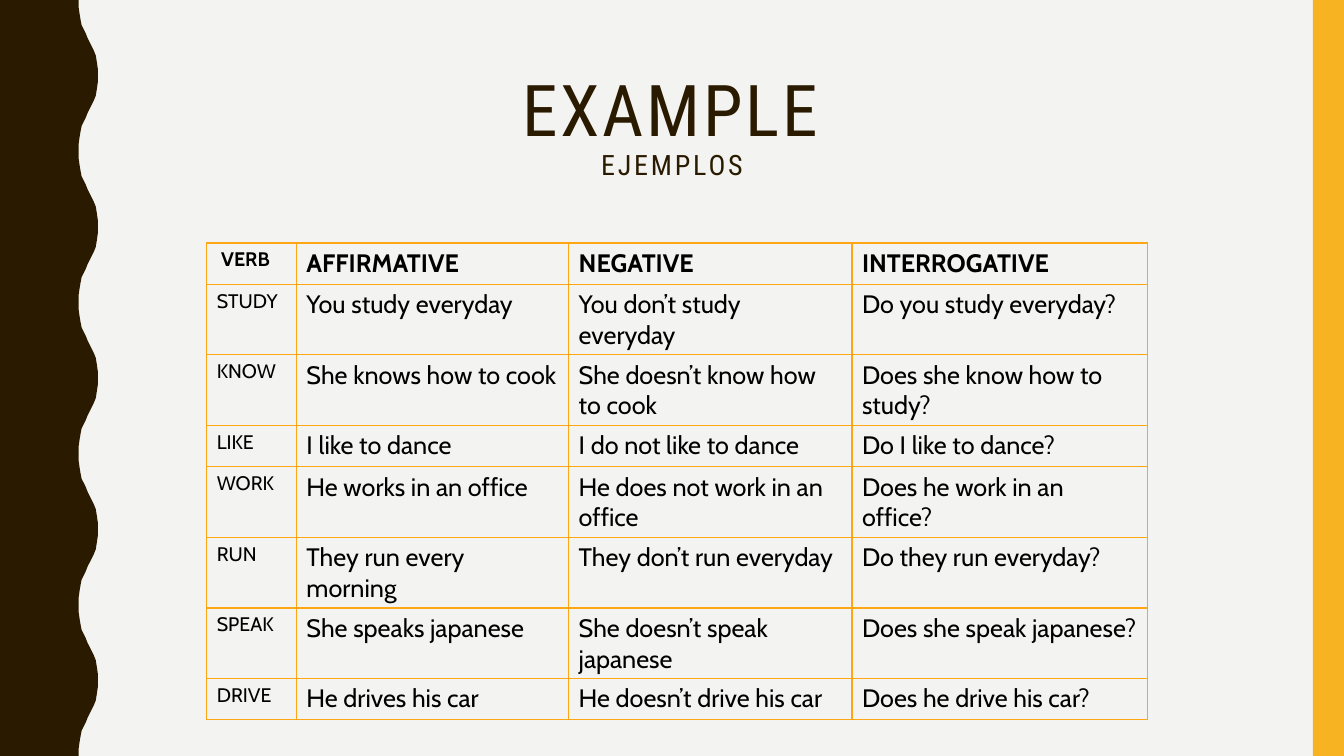
from dataclasses import dataclass

from lxml import etree
from pptx import Presentation
from pptx import util as u
from pptx.dml import color
from pptx.enum import shapes, text
from pptx.oxml import ns


@dataclass(frozen=True)
class Theme:
    paper: str = "F3F3F2"
    brown: str = "2A1A00"
    gold: str = "F8B323"
    grid: str = "FFA615"
    black: str = "000000"
    heading_font: str = "Roboto Condensed"
    body_font: str = "Cabin"
    title: int = 51
    subtitle: int = 20
    verb: int = 14
    sentence: int = 18


@dataclass(frozen=True)
class Example:
    verb: str
    affirmative: str
    negative: str
    interrogative: str

    def cells(self) -> tuple[str, ...]:
        return self.verb, self.affirmative, self.negative, self.interrogative


THEME = Theme()
WIDTH, HEIGHT = 13.33, 7.5
COLUMNS = (0.89, 2.7, 2.81, 2.93)
ROW_HEIGHT = 0.41
EXAMPLES = (
    Example(" VERB", "AFFIRMATIVE", "NEGATIVE", "INTERROGATIVE"),
    Example("STUDY", "You study everyday", "You don’t study everyday", "Do you study everyday?"),
    Example("KNOW", "She knows how to cook", "She doesn’t know how to cook",
            "Does she know how to study?"),
    Example("LIKE", "I like to dance", "I do not like to dance", "Do I like to dance?"),
    Example("WORK", "He works in an office", "He does not work in an office",
            "Does he work in an office?"),
    Example("RUN", "They run every morning", "They don’t run everyday", "Do they run everyday?"),
    Example("SPEAK", "She speaks japanese", "She doesn’t speak japanese",
            "Does she speak japanese?"),
    Example("DRIVE", "He drives his car", "He doesn’t drive his car", "Does he drive his car?"),
)
# Half a wave, from trough to crest: (x, distance down from the trough)
HALF_WAVE = (
    (0.78, 0), (0.78, 0.07), (0.79, 0.14), (0.8, 0.2), (0.81, 0.25),
    (0.83, 0.29), (0.85, 0.33), (0.87, 0.38), (0.89, 0.42), (0.91, 0.46),
    (0.93, 0.5), (0.95, 0.55), (0.96, 0.61), (0.97, 0.68), (0.97, 0.75),
)
WAVE_LENGTH, WAVES = 1.5, 5


def rgb(value: str) -> color.RGBColor:
    return color.RGBColor.from_string(value)


def write(p, words: str, *, size: int, font: str, ink: str,
          bold: bool = False, spacing: int = 0) -> None:
    """Add a run; spacing is the letter spacing in points."""
    r = p.add_run()
    r.text = words
    r.font.size = u.Pt(size)
    r.font.name = font
    r.font.bold = bold
    r.font.color.rgb = rgb(ink)
    if spacing:
        r.font._element.set("spc", str(spacing * 100))


def paint(sp, fill: str) -> None:
    sp.shadow.inherit = False
    sp.fill.solid()
    sp.fill.fore_color.rgb = rgb(fill)
    sp.line.fill.background()


def draw_wave(s) -> None:
    edge = []
    for wave in range(WAVES):
        top = wave * WAVE_LENGTH
        edge += [(x, top + dy) for x, dy in HALF_WAVE]
        edge += [(x, top + WAVE_LENGTH - dy) for x, dy in reversed(HALF_WAVE[:-1])]
    points = [(u.Inches(x), u.Inches(y)) for x, y in edge + [(0, HEIGHT)]]
    outline = s.shapes.build_freeform(0, 0)
    outline.add_line_segments(points, close=True)
    paint(outline.convert_to_shape(), THEME.brown)


def draw_gold_bar(s) -> None:
    sp = s.shapes.add_shape(shapes.MSO_SHAPE.RECTANGLE, u.Inches(13.02), 0,
                            u.Inches(0.31), u.Inches(HEIGHT))
    paint(sp, THEME.gold)


def draw_title(s) -> None:
    sp = s.shapes.add_textbox(u.Inches(1.1), u.Inches(0.66), u.Inches(11.13), u.Inches(1.63))
    tf = sp.text_frame
    tf.word_wrap = True
    tf.vertical_anchor = text.MSO_ANCHOR.TOP
    tf.margin_top = u.Inches(0.08)
    p = tf.paragraphs[0]
    p.alignment = text.PP_ALIGN.CENTER
    p.line_spacing = 0.9
    look = dict(font=THEME.heading_font, ink=THEME.brown, spacing=2)
    write(p, "EXAMPLE", size=THEME.title, **look)
    p.add_line_break()
    write(p, "EJEMPLOS", size=THEME.subtitle, **look)


def add_borders(cell) -> None:
    tc_pr = cell._tc.get_or_add_tcPr()
    for side in ("a:lnL", "a:lnR", "a:lnT", "a:lnB"):
        ln = etree.SubElement(tc_pr, ns.qn(side), w=str(u.Pt(1)))
        fill = etree.SubElement(ln, ns.qn("a:solidFill"))
        etree.SubElement(fill, ns.qn("a:srgbClr"), val=THEME.grid)


def draw_examples(s) -> None:
    frame = s.shapes.add_table(len(EXAMPLES), len(COLUMNS), u.Inches(2.05), u.Inches(2.41),
                               u.Inches(sum(COLUMNS)), u.Inches(ROW_HEIGHT * len(EXAMPLES)))
    table = frame.table
    table.horz_banding = False
    for column, width in zip(table.columns, COLUMNS):
        column.width = u.Inches(width)
    for i, example in enumerate(EXAMPLES):
        table.rows[i].height = u.Inches(ROW_HEIGHT)
        for j, words in enumerate(example.cells()):
            cell = table.cell(i, j)
            add_borders(cell)
            cell.fill.background()
            write(cell.text_frame.paragraphs[0], words,
                  size=THEME.sentence if j else THEME.verb,
                  font=THEME.body_font, ink=THEME.black, bold=i == 0)


def main() -> None:
    prs = Presentation()
    prs.slide_width, prs.slide_height = u.Inches(WIDTH), u.Inches(HEIGHT)
    s = prs.slides.add_slide(prs.slide_layouts[6])
    s.background.fill.solid()
    s.background.fill.fore_color.rgb = rgb(THEME.paper)
    draw_wave(s)
    draw_gold_bar(s)
    draw_title(s)
    draw_examples(s)
    prs.save("out.pptx")


if __name__ == "__main__":
    main()
